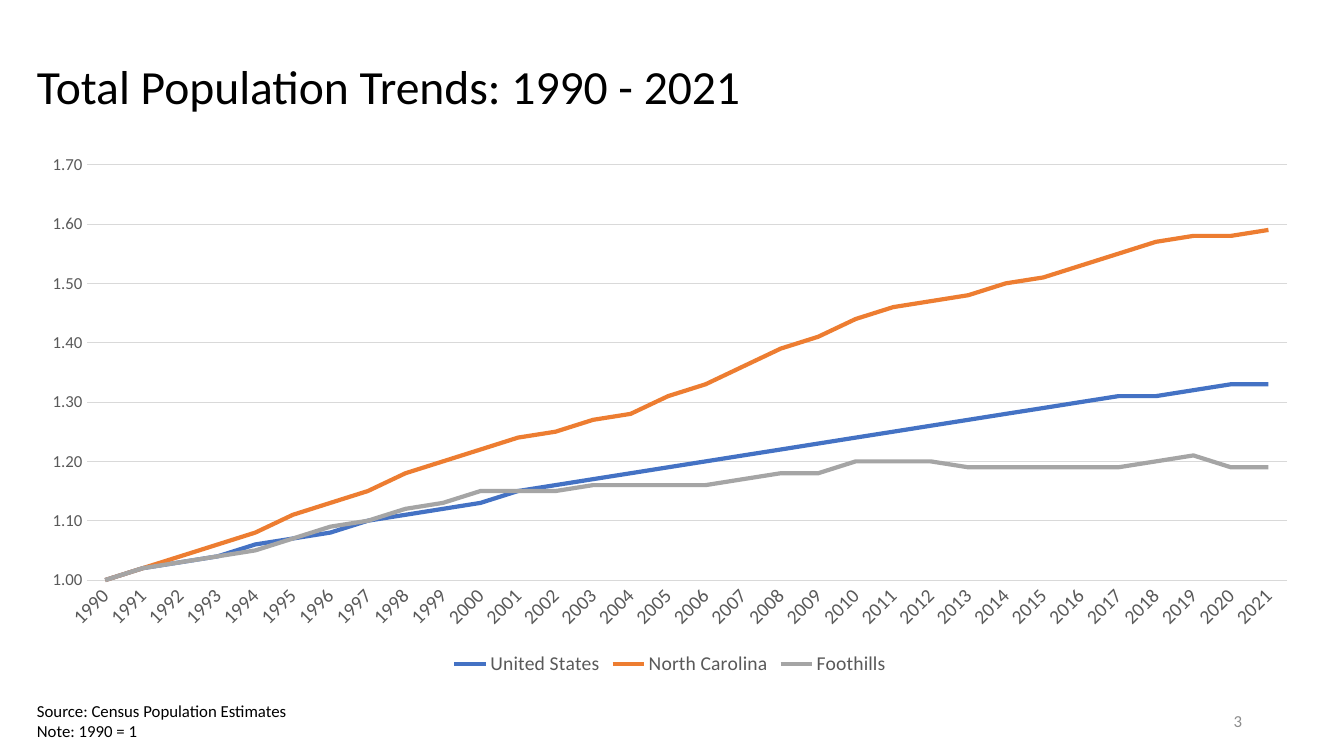
"""Build a slide with a line chart of population trends indexed to 1990."""
from pptx import Presentation
from pptx.chart.data import CategoryChartData
from pptx.dml.color import RGBColor
from pptx.enum.chart import XL_CHART_TYPE, XL_LEGEND_POSITION, XL_MARKER_STYLE, XL_TICK_MARK
from pptx.enum.text import MSO_ANCHOR, PP_ALIGN
from pptx.util import Pt

FONT = "Calibri"
GRID, LABEL = "D9D9D9", "595959"
SLIDE_SIZE = (1344, 756)
CHART_BOX = (27, 144, 1286, 536)
YEARS = [str(year) for year in range(1990, 2022)]
REGIONS = [
    ("United States", "4472C4",
     [1, 1.02, 1.03, 1.04, 1.06, 1.07, 1.08, 1.1, 1.11, 1.12, 1.13, 1.15, 1.16, 1.17, 1.18, 1.19,
      1.2, 1.21, 1.22, 1.23, 1.24, 1.25, 1.26, 1.27, 1.28, 1.29, 1.3, 1.31, 1.31, 1.32, 1.33, 1.33]),
    ("North Carolina", "ED7D31",
     [1, 1.02, 1.04, 1.06, 1.08, 1.11, 1.13, 1.15, 1.18, 1.2, 1.22, 1.24, 1.25, 1.27, 1.28, 1.31,
      1.33, 1.36, 1.39, 1.41, 1.44, 1.46, 1.47, 1.48, 1.5, 1.51, 1.53, 1.55, 1.57, 1.58, 1.58, 1.59]),
    ("Foothills", "A5A5A5",
     [1, 1.02, 1.03, 1.04, 1.05, 1.07, 1.09, 1.1, 1.12, 1.13, 1.15, 1.15, 1.15, 1.16, 1.16, 1.16,
      1.16, 1.17, 1.18, 1.18, 1.2, 1.2, 1.2, 1.19, 1.19, 1.19, 1.19, 1.19, 1.2, 1.21, 1.19, 1.19]),
]
TEXTS = [
    {"box": (27, 34, 1286, 110), "lines": ["Total Population Trends: 1990 - 2021"], "size": 34,
     "color": "000000", "frame": {"word_wrap": True, "vertical_anchor": MSO_ANCHOR.MIDDLE},
     "paragraph": {"line_spacing": 0.9}},
    {"box": (950, 701, 302, 40), "lines": ["3"], "size": 12, "color": "8C8C8C",
     "frame": {"word_wrap": True, "vertical_anchor": MSO_ANCHOR.MIDDLE},
     "paragraph": {"alignment": PP_ALIGN.RIGHT}},
    {"box": (27, 696, 273, 50), "lines": ["Source: Census Population Estimates", "Note: 1990 = 1"],
     "size": 12, "color": "000000", "frame": {"word_wrap": False}, "paragraph": {}},
]
VALUE_AXIS = {"minimum_scale": 1, "maximum_scale": 1.7, "major_unit": 0.1,
              "has_major_gridlines": True}


def px(length):
    return round(length * 914400 / 100.8)


def rgb(color):
    return RGBColor.from_string(color)


def set_all(target, values):
    for name, value in values.items():
        setattr(target, name, value)


def set_font(font, size, color):
    set_all(font, {"name": FONT, "size": Pt(size)})
    font.color.rgb = rgb(color)


def set_line(line, color, width):
    line.color.rgb = rgb(color)
    line.width = Pt(width)


def add_text(slide, text):
    frame = slide.shapes.add_textbox(*map(px, text["box"])).text_frame
    set_all(frame, text["frame"])
    frame.text = "\n".join(text["lines"])
    for paragraph in frame.paragraphs:
        set_all(paragraph, text["paragraph"])
        for run in paragraph.runs:
            set_font(run.font, text["size"], text["color"])


def add_trends(slide):
    trends = CategoryChartData(number_format="0.00")
    trends.categories = YEARS
    for region, _, values in REGIONS:
        trends.add_series(region, values)
    chart = slide.shapes.add_chart(XL_CHART_TYPE.LINE, *map(px, CHART_BOX), trends).chart
    set_all(chart, {"has_title": False, "has_legend": True})
    set_font(chart.font, 10, "000000")
    set_all(chart.legend, {"position": XL_LEGEND_POSITION.BOTTOM, "include_in_layout": False})
    set_font(chart.legend.font, 14, LABEL)

    years, index = chart.category_axis, chart.value_axis
    for axis, size in ((years, 14), (index, 12)):
        set_all(axis, {"major_tick_mark": XL_TICK_MARK.NONE, "minor_tick_mark": XL_TICK_MARK.NONE})
        set_font(axis.tick_labels.font, size, LABEL)
    set_line(years.format.line, GRID, 0.75)
    set_all(index, VALUE_AXIS)
    set_all(index.tick_labels, {"number_format": "0.00", "number_format_is_linked": False})
    set_line(index.major_gridlines.format.line, GRID, 0.75)
    index.format.line.fill.background()

    chart.plots[0].vary_by_categories = False
    for series, (_, color, _) in zip(chart.plots[0].series, REGIONS):
        series.smooth = False
        series.marker.style = XL_MARKER_STYLE.NONE
        set_line(series.format.line, color, 3)


def main():
    deck = Presentation()
    deck.slide_width, deck.slide_height = map(px, SLIDE_SIZE)
    slide = deck.slides.add_slide(deck.slide_layouts[6])
    add_trends(slide)
    for text in TEXTS:
        add_text(slide, text)
    deck.save("out.pptx")


if __name__ == "__main__":
    main()
